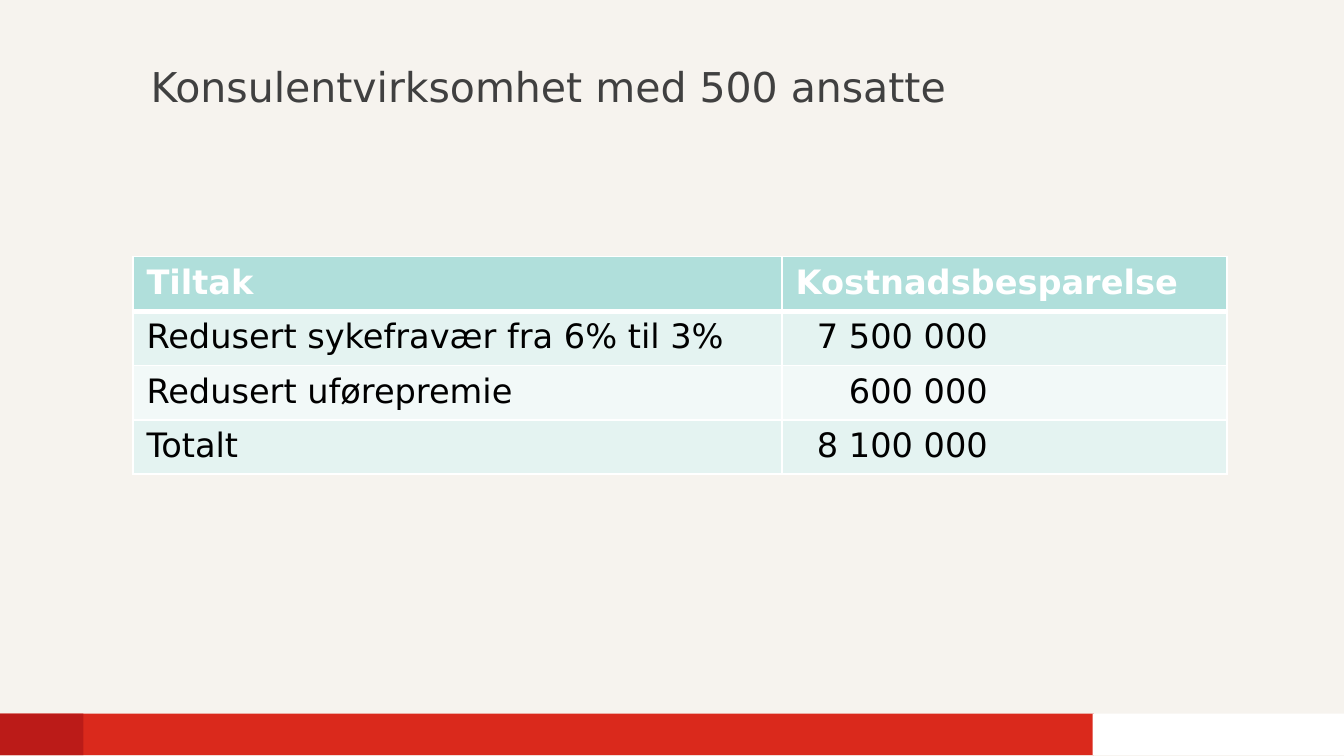
from lxml import etree
from pptx import Presentation
from pptx.dml.color import RGBColor
from pptx.enum.shapes import MSO_SHAPE
from pptx.enum.text import PP_ALIGN
from pptx.oxml.ns import qn
from pptx.util import Inches, Pt

RECT = MSO_SHAPE.RECTANGLE
LEFT, RIGHT = PP_ALIGN.LEFT, PP_ALIGN.RIGHT
FONT = "DejaVu Sans"
WHITE = "FFFFFF"
HEAD = "B0DFDB"
BANDS = ("E4F3F1", "F2F9F8")
COLS = (4.83, 3.31)
HEIGHT = 1.62
ROWS = (
    ("Tiltak", "Kostnadsbesparelse"),
    ("Redusert sykefravær fra 6% til 3%", "7 500 000"),
    ("Redusert uførepremie", "600 000"),
    ("Totalt", "8 100 000"),
)


def paint(fill, color):
    fill.solid()
    fill.fore_color.rgb = RGBColor.from_string(color)


def write(frame, text, size, color, bold=False, align=LEFT):
    par = frame.paragraphs[0]
    par.text = text
    par.alignment = align
    font = par.font
    font.name, font.size, font.bold = FONT, Pt(size), bold
    font.color.rgb = RGBColor.from_string(color)


def add_bar(slide, left, width, color):
    bar = slide.shapes.add_shape(
        RECT, Inches(left), Inches(5.31), Inches(width), Inches(0.31))
    bar.shadow.inherit = False
    paint(bar.fill, color)
    bar.line.fill.background()


def add_title(slide, text):
    box = slide.shapes.add_textbox(
        Inches(1.12), Inches(0.46), Inches(8.88), Inches(0.66))
    frame = box.text_frame
    frame.word_wrap = True
    frame.margin_left = frame.margin_right = 0
    frame.margin_top = frame.margin_bottom = 0
    write(frame, text, 22, "404040")


def add_edges(cell, top, bottom):
    props = cell._tc.get_or_add_tcPr()
    for side, width in (("L", 1), ("R", 1), ("T", top), ("B", bottom)):
        line = etree.SubElement(props, qn(f"a:ln{side}"), w=str(Pt(width)))
        fill = etree.SubElement(line, qn("a:solidFill"))
        etree.SubElement(fill, qn("a:srgbClr"), val=WHITE)


def add_grid(slide):
    table = slide.shapes.add_table(
        len(ROWS), len(COLS), Inches(0.99), Inches(1.91),
        Inches(sum(COLS)), Inches(HEIGHT)).table
    for col, width in zip(table.columns, COLS):
        col.width = Inches(width)
    for r, texts in enumerate(ROWS):
        table.rows[r].height = Inches(HEIGHT / len(ROWS))
        head = r == 0
        for c, text in enumerate(texts):
            cell = table.cell(r, c)
            # A thick rule parts the header from the body
            add_edges(cell, 3 if r == 1 else 1, 3 if head else 1)
            paint(cell.fill, HEAD if head else BANDS[(r - 1) % 2])
            amount = c == 1 and not head
            if amount:
                cell.margin_right = Inches(1.78)
            write(cell.text_frame, text, 18, WHITE if head else "000000",
                  head, RIGHT if amount else LEFT)


def main():
    deck = Presentation()
    # Widescreen, 16 to 9
    deck.slide_width = Inches(10)
    deck.slide_height = Inches(10 * 9 / 16)
    slide = deck.slides.add_slide(deck.slide_layouts[6])
    paint(slide.background.fill, "F6F3EE")

    # Footer band
    add_bar(slide, 0, 8.14, "DA291C")
    add_bar(slide, 8.13, 1.87, WHITE)
    add_bar(slide, 0, 0.62, "BB1B18")

    # Title and savings table
    add_title(slide, "Konsulentvirksomhet med 500 ansatte")
    add_grid(slide)
    deck.save("out.pptx")


if __name__ == "__main__":
    main()
